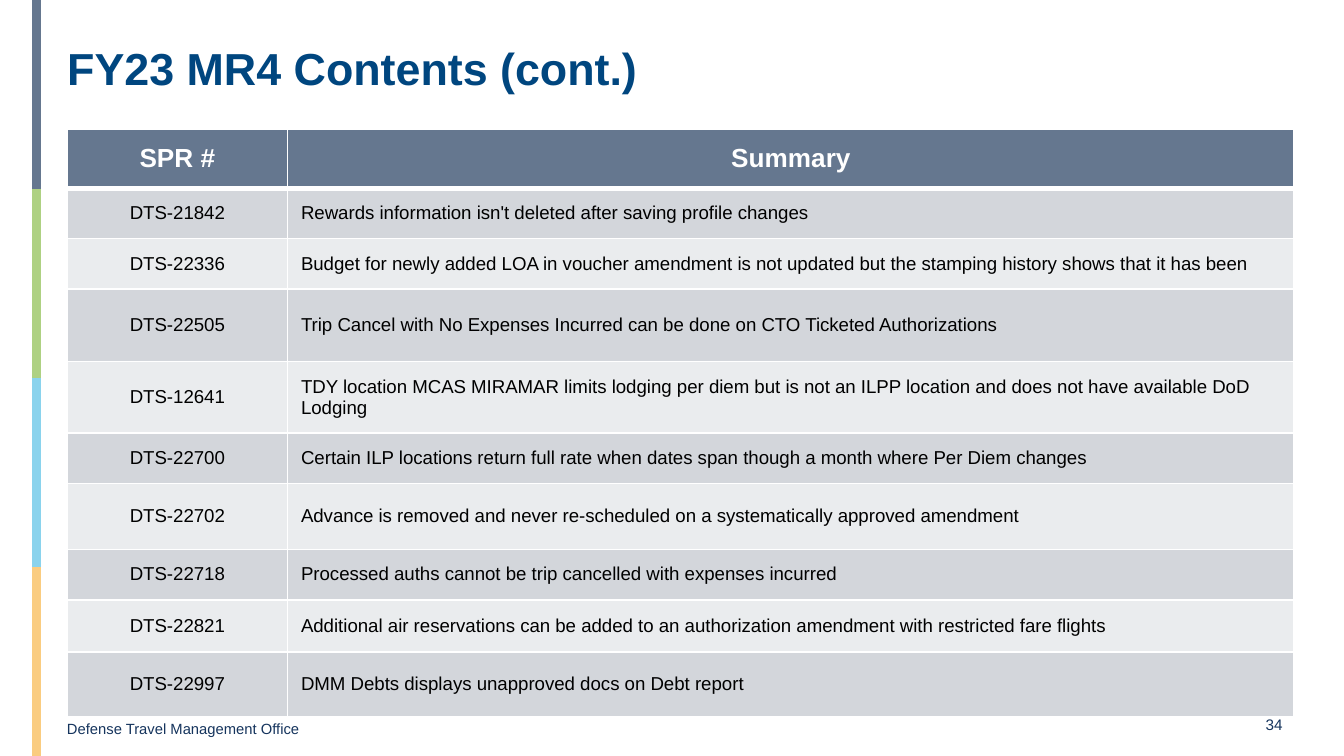
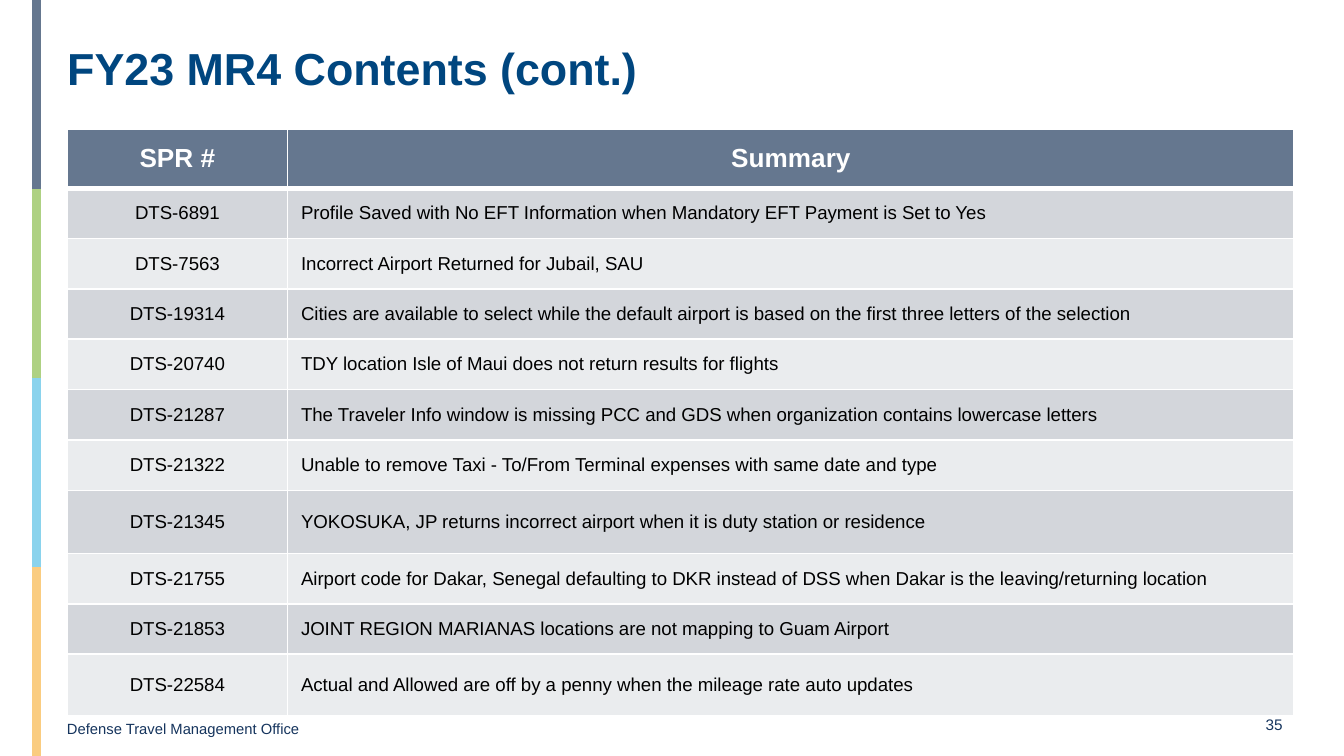
from typing import NamedTuple

from lxml.etree import SubElement
from pptx import Presentation
from pptx.dml.color import RGBColor
from pptx.enum.shapes import MSO_CONNECTOR
from pptx.enum.text import MSO_ANCHOR, PP_ALIGN
from pptx.oxml import parse_xml
from pptx.oxml.ns import nsdecls, qn
from pptx.util import Inches, Pt

WIDE, HIGH = 10, 10 * 9 / 16
FONT = "Arial"
SLATE, GREEN, SKY, AMBER = "65778F", "AED182", "8AD3ED", "FACC80"
BLUE, NAVY, WHITE, BLACK = "00467F", "15345D", "FFFFFF", "000000"
SHADES = ("D3D6DB", "EAECEE")
HEADS = ("SPR #", "Summary")
COLS = (1.64, 7.49)


class Style(NamedTuple):
    size: float
    color: str
    bold: bool = False
    align: PP_ALIGN = PP_ALIGN.LEFT


class Row(NamedTuple):
    code: str
    text: str
    high: float = 3 / 8


class Page(NamedTuple):
    title: str
    number: int
    rows: tuple[Row, ...]


TITLE = Style(24, BLUE, True)
FOOT = Style(7.9, NAVY)
NUMBER = Style(8.2, NAVY, align=PP_ALIGN.CENTER)
HEAD = Style(14, WHITE, True, PP_ALIGN.CENTER)
CODE = Style(10, BLACK, align=PP_ALIGN.CENTER)
BODY = Style(10, BLACK)

PAGES = (
    Page("FY23 MR4 Contents (cont.)", 34, (
        Row("DTS-21842", "Rewards information isn't deleted after saving profile changes"),
        Row("DTS-22336", "Budget for newly added LOA in voucher amendment is not updated "
            "but the stamping history shows that it has been"),
        Row("DTS-22505", "Trip Cancel with No Expenses Incurred can be done on CTO "
            "Ticketed Authorizations", 0.54),
        Row("DTS-12641", "TDY location MCAS MIRAMAR limits lodging per diem but is not an "
            "ILPP location and does not have available DoD Lodging", 0.52),
        Row("DTS-22700", "Certain ILP locations return full rate when dates span though a "
            "month where Per Diem changes"),
        Row("DTS-22702", "Advance is removed and never re-scheduled on a systematically "
            "approved amendment", 0.49),
        Row("DTS-22718", "Processed auths cannot be trip cancelled with expenses incurred"),
        Row("DTS-22821", "Additional air reservations can be added to an authorization "
            "amendment with restricted fare flights", 0.39),
        Row("DTS-22997", "DMM Debts displays unapproved docs on Debt report", 0.48),
    )),
    Page("FY23 MR4 Contents (cont.)", 35, (
        Row("DTS-6891", "Profile Saved with No EFT Information when Mandatory EFT Payment "
            "is Set to Yes"),
        Row("DTS-7563", "Incorrect Airport Returned for Jubail, SAU"),
        Row("DTS-19314", "Cities are available to select while the default airport is "
            "based on the first three letters of the selection"),
        Row("DTS-20740", "TDY location Isle of Maui does not return results for flights"),
        Row("DTS-21287", "The Traveler Info window is missing PCC and GDS when "
            "organization contains lowercase letters"),
        Row("DTS-21322", "Unable to remove Taxi - To/From Terminal expenses with same "
            "date and type"),
        Row("DTS-21345", "YOKOSUKA, JP returns incorrect airport when it is duty station "
            "or residence", 0.47),
        Row("DTS-21755", "Airport code for Dakar, Senegal defaulting to DKR instead of DSS "
            "when Dakar is the leaving/returning location"),
        Row("DTS-21853", "JOINT REGION MARIANAS locations are not mapping to Guam Airport"),
        Row("DTS-22584", "Actual and Allowed are off by a penny when the mileage rate "
            "auto updates", 0.46),
    )),
)


def paint(target, color: str) -> None:
    """Set a solid colour on a fill."""
    target.solid()
    target.fore_color.rgb = RGBColor.from_string(color)


def write(frame, text: str, style: Style) -> None:
    para = frame.paragraphs[0]
    para.alignment = style.align
    run = para.add_run()
    run.text = text
    run.font.name = FONT
    run.font.size = Pt(style.size)
    run.font.bold = style.bold
    paint(run.font.fill, style.color)


def inset(frame, size: float) -> None:
    frame.margin_left = frame.margin_right = Inches(size)
    frame.margin_top = frame.margin_bottom = Inches(size)


def add_text(slide, text: str, style: Style, box: tuple[float, ...]):
    frame = slide.shapes.add_textbox(*map(Inches, box)).text_frame
    frame.word_wrap = True
    write(frame, text, style)
    return frame


def add_bands(slide) -> None:
    step = HIGH / 4
    for i, color in enumerate((SLATE, GREEN, SKY, AMBER)):
        band = slide.shapes.add_connector(
            MSO_CONNECTOR.STRAIGHT, Inches(0.27), Inches(i * step),
            Inches(0.27), Inches((i + 1) * step))
        band.line.width = Pt(5)
        paint(band.line.fill, color)
        SubElement(band._element.spPr, qn("a:effectLst"))


def add_title(slide, text: str) -> None:
    title = slide.shapes.title
    title.left, title.top = Inches(0.5), Inches(0.3)
    title.width, title.height = Inches(9.13), Inches(0.55)
    frame = title.text_frame
    frame.vertical_anchor = MSO_ANCHOR.TOP
    inset(frame, 0)
    write(frame, text, TITLE)


def edge(cell, top: float, base: float) -> None:
    """Draw the white borders of a cell, widths in points."""
    props = cell._tc.get_or_add_tcPr()
    for i, (side, size) in enumerate(zip("LRTB", (1, 1, top, base))):
        props.insert(i, parse_xml(
            f'<a:ln{side} {nsdecls("a")} w="{Pt(size)}"><a:solidFill>'
            f'<a:srgbClr val="{WHITE}"/></a:solidFill></a:ln{side}>'))


def fill_cell(cell, text: str, style: Style, shade: str, line: int) -> None:
    cell.vertical_anchor = MSO_ANCHOR.MIDDLE
    inset(cell, 0.1)
    paint(cell.fill, shade)
    edge(cell, 3 if line == 1 else 1, 3 if line == 0 else 1)
    write(cell.text_frame, text, style)


def add_grid(slide, rows: tuple[Row, ...]) -> None:
    lines = (Row(*HEADS, 0.44), *rows)
    high = sum(row.high for row in lines)
    grid = slide.shapes.add_table(
        len(lines), len(COLS), Inches(0.5), Inches(0.96),
        Inches(sum(COLS)), Inches(high)).table
    for col, wide in zip(grid.columns, COLS):
        col.width = Inches(wide)
    for i, row in enumerate(lines):
        grid.rows[i].height = Inches(row.high)
        shade = SHADES[(i - 1) % 2] if i else SLATE
        styles = (CODE, BODY) if i else (HEAD, HEAD)
        for j, text in enumerate((row.code, row.text)):
            fill_cell(grid.cell(i, j), text, styles[j], shade, i)


def add_page(deck, page: Page) -> None:
    slide = deck.slides.add_slide(deck.slide_layouts[5])
    paint(slide.background.fill, WHITE)
    # Shared frame: footer, side bands, title, page number
    add_text(slide, "Defense Travel Management Office", FOOT, (0.4, 5.31, 8.94, 0.23))
    add_bands(slide)
    add_title(slide, page.title)
    inset(add_text(slide, str(page.number), NUMBER, (9.33, 5.32, 0.3, 0.19)), 0)
    # Content
    add_grid(slide, page.rows)


def main() -> None:
    deck = Presentation()
    deck.slide_width, deck.slide_height = Inches(WIDE), Inches(HIGH)
    for page in PAGES:
        add_page(deck, page)
    deck.save("out.pptx")


if __name__ == "__main__":
    main()
